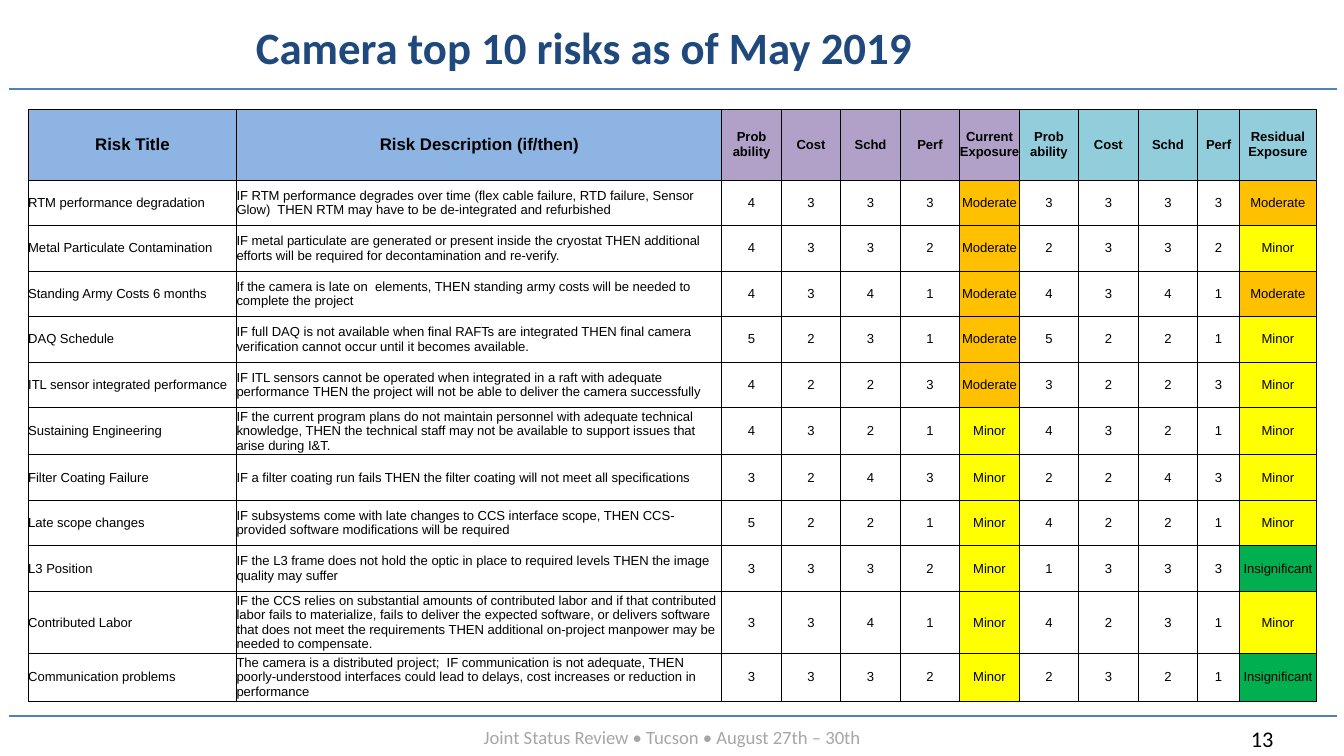
from dataclasses import dataclass

from lxml import etree
from pptx import Presentation
from pptx.dml.color import RGBColor
from pptx.enum.shapes import MSO_CONNECTOR
from pptx.enum.text import MSO_ANCHOR, PP_ALIGN
from pptx.oxml.ns import qn
from pptx.util import Pt

LEFT, CENTER = PP_ALIGN.LEFT, PP_ALIGN.CENTER
MIDDLE = MSO_ANCHOR.MIDDLE
STRAIGHT = MSO_CONNECTOR.STRAIGHT


@dataclass(frozen=True)
class Theme:
    head: str = "Calibri"
    body: str = "Arial"
    title: str = "1F497D"
    rule: str = "4F81BD"
    ink: str = "000000"
    muted: str = "A6A6A6"
    label: str = "8DB4E2"
    current: str = "B1A0C7"
    residual: str = "92CDDC"
    moderate: str = "FFC000"
    minor: str = "FFFF00"
    slight: str = "00B050"
    title_size: int = 24
    page_size: int = 12
    foot_size: int = 10
    head_size: int = 9
    cell_size: int = 7


class Deck:
    def __init__(self, theme, slide):
        self.theme = theme
        self.slide = slide

    def add_text(self, frame, text, size, color, font, bold=False, align=LEFT):
        para = frame.paragraphs[0]
        para.alignment = align
        run = para.add_run()
        run.text = text
        run.font.name = font
        run.font.size = Pt(size)
        run.font.bold = bold
        run.font.color.rgb = RGBColor.from_string(color)

    def title(self, text, *box):
        shape = self.slide.shapes.title
        shape.left, shape.top, shape.width, shape.height = map(Pt, box)
        shape.text_frame.vertical_anchor = MIDDLE
        style = self.theme
        self.add_text(shape.text_frame, text, style.title_size, style.title,
                      style.head, True, CENTER)

    def label(self, text, box, size, color, align=LEFT):
        frame = self.slide.shapes.add_textbox(*map(Pt, box)).text_frame
        frame.word_wrap = True
        self.add_text(frame, text, size, color, self.theme.head, align=align)

    def rule(self, start, end, y):
        line = self.slide.shapes.add_connector(
            STRAIGHT, Pt(start), Pt(y), Pt(end), Pt(y))
        line.line.color.rgb = RGBColor.from_string(self.theme.rule)
        line.line.width = Pt(1)
        etree.SubElement(line._element.spPr, qn("a:effectLst"))

    def border(self, cell):
        props = cell._tc.get_or_add_tcPr()
        for side in ("lnL", "lnR", "lnT", "lnB"):
            line = etree.SubElement(props, qn(f"a:{side}"), w=str(Pt(0.5)))
            fill = etree.SubElement(line, qn("a:solidFill"))
            etree.SubElement(fill, qn("a:srgbClr"), val=self.theme.ink)

    def cell(self, cell, text, fill=None, size=None, bold=False, align=CENTER):
        style = self.theme
        cell.margin_left = cell.margin_right = 0
        cell.margin_top = cell.margin_bottom = 0
        cell.vertical_anchor = MIDDLE
        self.border(cell)
        if fill:
            cell.fill.solid()
            cell.fill.fore_color.rgb = RGBColor.from_string(fill)
        else:
            cell.fill.background()
        self.add_text(cell.text_frame, text, size or style.cell_size,
                      style.ink, style.body, bold, align)

    def table(self, heads, rows, left, top, widths, heights):
        style = self.theme
        grid = self.slide.shapes.add_table(
            len(rows) + 1, len(heads), Pt(left), Pt(top),
            Pt(sum(widths)), Pt(sum(heights))).table
        grid.first_row = grid.horz_banding = False
        for col, width in zip(grid.columns, widths):
            col.width = Pt(width)
        for row, height in zip(grid.rows, heights):
            row.height = Pt(height)
        tints = [style.label] * 2 + [style.current] * 5 + [style.residual] * 5
        for c, (text, tint) in enumerate(zip(heads, tints)):
            size = style.head_size if c < 2 else style.cell_size
            self.cell(grid.cell(0, c), text, tint, size, True)
        levels = {"Moderate": style.moderate, "Minor": style.minor,
                  "Insignificant": style.slight}
        for r, row in enumerate(rows, 1):
            for c, text in enumerate(row):
                self.cell(grid.cell(r, c), text, levels.get(text),
                          align=LEFT if c < 2 else CENTER)


SCORES = ["Prob ability", "Cost", "Schd", "Perf"]
HEADS = ["Risk Title", "Risk Description (if/then)",
         *SCORES, "Current Exposure", *SCORES, "Residual Exposure"]

# Title, description, then scores and exposure: current, residual
RISKS = [
    ("RTM performance degradation",
     "IF RTM performance degrades over time (flex cable failure, RTD failure, "
     "Sensor Glow)  THEN RTM may have to be de-integrated and refurbished",
     "4333", "Moderate", "3333", "Moderate"),
    ("Metal Particulate Contamination",
     "IF metal particulate are generated or present inside the cryostat THEN "
     "additional efforts will be required for decontamination and re-verify.",
     "4332", "Moderate", "2332", "Minor"),
    ("Standing Army Costs 6 months",
     "If the camera is late on  elements, THEN standing army costs will be "
     "needed to complete the project",
     "4341", "Moderate", "4341", "Moderate"),
    ("DAQ Schedule",
     "IF full DAQ is not available when final RAFTs are integrated THEN final "
     "camera verification cannot occur until it becomes available.",
     "5231", "Moderate", "5221", "Minor"),
    ("ITL sensor integrated performance",
     "IF ITL sensors cannot be operated when integrated in a raft with "
     "adequate performance THEN the project will not be able to deliver the "
     "camera successfully",
     "4223", "Moderate", "3223", "Minor"),
    ("Sustaining Engineering",
     "IF the current program plans do not maintain personnel with adequate "
     "technical knowledge, THEN the technical staff may not be available to "
     "support issues that arise during I&T.",
     "4321", "Minor", "4321", "Minor"),
    ("Filter Coating Failure",
     "IF a filter coating run fails THEN the filter coating will not meet all "
     "specifications",
     "3243", "Minor", "2243", "Minor"),
    ("Late scope changes",
     "IF subsystems come with late changes to CCS interface scope, THEN "
     "CCS-provided software modifications will be required",
     "5221", "Minor", "4221", "Minor"),
    ("L3 Position",
     "IF the L3 frame does not hold the optic in place to required levels "
     "THEN the image quality may suffer",
     "3332", "Minor", "1333", "Insignificant"),
    ("Contributed Labor",
     "IF the CCS relies on substantial amounts of contributed labor and if "
     "that contributed labor fails to materialize, fails to deliver the "
     "expected software, or delivers software that does not meet the "
     "requirements THEN additional on-project manpower may be needed to "
     "compensate.",
     "3341", "Minor", "4231", "Minor"),
    ("Communication problems",
     "The camera is a distributed project;  IF communication is not adequate, "
     "THEN poorly-understood interfaces could lead to delays, cost increases "
     "or reduction in performance",
     "3332", "Minor", "2321", "Insignificant"),
]


def main():
    theme = Theme()
    show = Presentation()
    show.slide_width, show.slide_height = Pt(720), Pt(405)
    deck = Deck(theme, show.slides.add_slide(show.slide_layouts[5]))

    for y in (47.5, 383.75):
        deck.rule(716.4, 5, y)
    deck.label("13", (663, 385.2, 44.6, 21.6), theme.page_size, theme.ink)
    deck.label("Joint Status Review • Tucson • August 27th – 30th",
               (36, 385.2, 648, 19.4), theme.foot_size, theme.muted, CENTER)
    deck.title("Camera top 10 risks as of May 2019", 102.2, 8.6, 421.2, 33.1)

    rows = [(name, text, *now, level, *later, rest)
            for name, text, now, level, later, rest in RISKS]
    widths = [111.6, 260] + [31.87] * 8 + [22.5, 41]
    heights = [38] + [24.4] * len(rows)
    deck.table(HEADS, rows, 15.1, 58.5, widths, heights)
    show.save("out.pptx")


if __name__ == "__main__":
    main()
